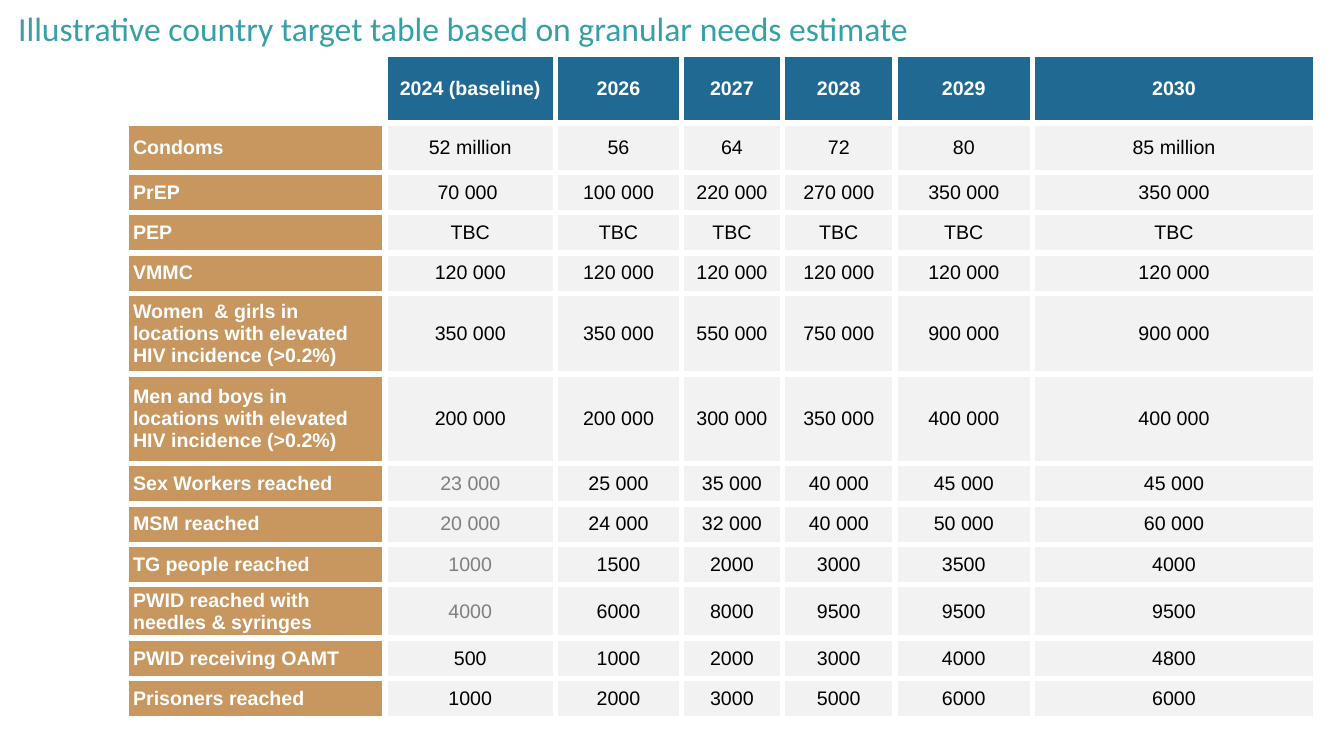
"""Build a slide with a table of illustrative country targets, 2024 to 2030."""
from lxml import etree
from pptx import Presentation
from pptx.dml.color import RGBColor
from pptx.enum.text import MSO_ANCHOR, MSO_AUTO_SIZE, PP_ALIGN
from pptx.oxml.ns import qn
from pptx.util import Pt

LEFT, CENTER = PP_ALIGN.LEFT, PP_ALIGN.CENTER
MIDDLE = MSO_ANCHOR.MIDDLE
NO_AUTOFIT = MSO_AUTO_SIZE.NONE
PX = 9144
TITLE_ONLY = 5

THEME = {
    "title": "36A0A8", "header": "1F6993", "label": "C8965F", "value": "F2F2F2",
    "light": "FFFFFF", "dark": "000000", "muted": "7F7F7F",
    "title_font": "Calibri", "table_font": "Arial",
    "title_size": 24, "table_size": 14, "border": 4.5,
}

COLUMN_WIDTHS = [257, 169, 125, 100, 112, 136, 281]
ROW_HEIGHTS = [68, 49, 40, 40, 40, 80, 89, 40, 40, 40, 53, 40, 40]
TARGETS = [
    ["", "2024 (baseline)", "2026", "2027", "2028", "2029", "2030"],
    ["Condoms", "52 million", "56", "64", "72", "80", "85 million"],
    ["PrEP", "70 000 ", "100 000", "220 000", "270 000", "350 000", "350 000"],
    ["PEP"] + ["TBC"] * 6,
    ["VMMC"] + ["120 000"] * 6,
    ["Women  & girls in locations with elevated HIV incidence (>0.2%)",
     "350 000", "350 000", "550 000", "750 000", "900 000", "900 000"],
    ["Men and boys in locations with elevated HIV incidence (>0.2%)",
     "200 000", "200 000", "300 000", "350 000", "400 000", "400 000"],
    ["Sex Workers reached", "23 000", "25 000", "35 000", "40 000", "45 000", "45 000"],
    ["MSM reached", "20 000", "24 000", "32 000", "40 000", "50 000", "60 000"],
    ["TG people reached", "1000", "1500", "2000", "3000", "3500", "4000"],
    ["PWID reached with needles & syringes", "4000", "6000", "8000", "9500", "9500", "9500"],
    ["PWID receiving OAMT", "500", "1000", "2000", "3000", "4000", "4800"],
    ["Prisoners reached", "1000", "2000", "3000", "5000", "6000", "6000"],
]
MUTED_BASELINES = range(7, 11)


def write(text_frame, text, *, size, font, color, bold=False, align=LEFT):
    paragraph = text_frame.paragraphs[0]
    paragraph.alignment = align
    run = paragraph.add_run()
    run.text = text
    run.font.size = Pt(size)
    run.font.name = font
    run.font.bold = bold
    run.font.color.rgb = RGBColor.from_string(color)


def add_borders(cell, color, width):
    properties = cell._tc.get_or_add_tcPr()
    for side in ("a:lnL", "a:lnR", "a:lnT", "a:lnB"):
        line = etree.SubElement(properties, qn(side), w=str(Pt(width)))
        fill = etree.SubElement(line, qn("a:solidFill"))
        etree.SubElement(fill, qn("a:srgbClr"), val=color)


presentation = Presentation()
presentation.slide_width = 1333 * PX
presentation.slide_height = 750 * PX
slide = presentation.slides.add_slide(presentation.slide_layouts[TITLE_ONLY])

title = slide.shapes.title
title.left, title.top, title.width, title.height = 8 * PX, 3 * PX, 1289 * PX, 50 * PX
title.text_frame.auto_size = NO_AUTOFIT
title.text_frame.word_wrap = True
title.text_frame.vertical_anchor = MIDDLE
write(title.text_frame, "Illustrative country target table based on granular needs estimate",
      size=THEME["title_size"], font=THEME["title_font"], color=THEME["title"])

table = slide.shapes.add_table(
    len(ROW_HEIGHTS), len(COLUMN_WIDTHS), 125 * PX, 54 * PX,
    sum(COLUMN_WIDTHS) * PX, sum(ROW_HEIGHTS) * PX).table
table.first_row = False
table.horz_banding = False
for column, width in zip(table.columns, COLUMN_WIDTHS):
    column.width = width * PX
for row, height in zip(table.rows, ROW_HEIGHTS):
    row.height = height * PX

for row_index, texts in enumerate(TARGETS):
    for column_index, text in enumerate(texts):
        cell = table.cell(row_index, column_index)
        cell.vertical_anchor = MIDDLE
        cell.margin_left = cell.margin_right = 7 * PX
        cell.margin_top = cell.margin_bottom = 0
        add_borders(cell, THEME["light"], THEME["border"])
        if not text:
            cell.fill.background()
            continue
        is_label = column_index == 0
        is_heading = is_label or row_index == 0
        if is_heading:
            background, color = "label" if is_label else "header", "light"
        else:
            is_muted = column_index == 1 and row_index in MUTED_BASELINES
            background, color = "value", "muted" if is_muted else "dark"
        cell.fill.solid()
        cell.fill.fore_color.rgb = RGBColor.from_string(THEME[background])
        write(cell.text_frame, text, size=THEME["table_size"], font=THEME["table_font"],
              color=THEME[color], bold=is_heading, align=LEFT if is_label else CENTER)

presentation.save("out.pptx")
